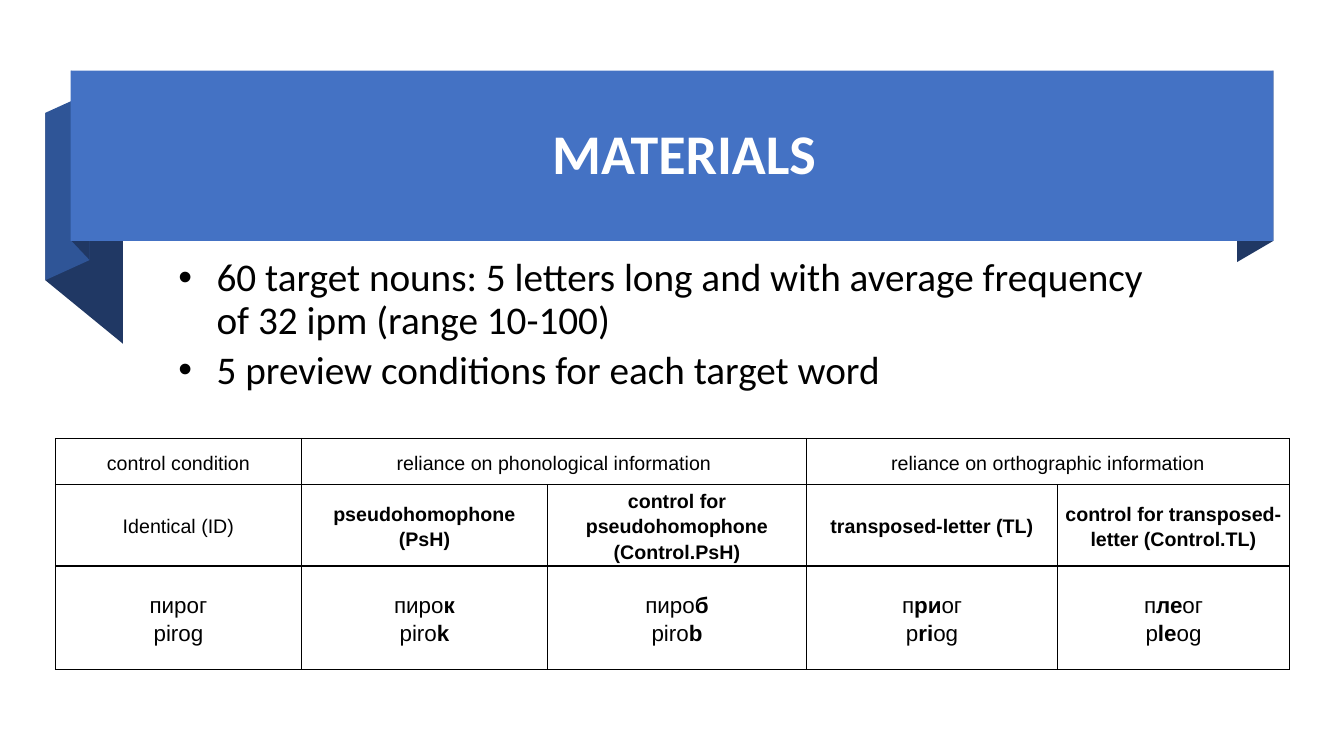
from dataclasses import dataclass

from lxml.etree import SubElement
from pptx import Presentation
from pptx.dml.color import RGBColor
from pptx.enum.shapes import MSO_SHAPE
from pptx.enum.text import MSO_ANCHOR, PP_ALIGN
from pptx.oxml.ns import qn
from pptx.util import Inches, Pt

# Content
TITLE = "MATERIALS"
BULLETS = [
    "60 target nouns: 5 letters long and with average frequency of 32 ipm (range 10-100)",
    "5 preview conditions for each target word",
]
# Each cell is a list of lines; asterisks enclose bold letters, None continues a merge
CONDITIONS = [
    [["control condition"], ["reliance on phonological information"], None,
     ["reliance on orthographic information"], None],
    [["Identical (ID)"], ["*pseudohomophone (PsH)*"],
     ["*control for pseudohomophone (Control.PsH)*"], ["*transposed-letter (TL)*"],
     ["*control for transposed-letter (Control.TL)*"]],
    [["пирог", "pirog"], ["пиро*к*", "piro*k*"], ["пиро*б*", "piro*b*"],
     ["п*ри*ог", "p*ri*og"], ["п*ле*ог", "p*le*og"]],
]
COLUMN_WIDTHS = [2.44, 2.44, 2.57, 2.49, 2.3]
ROW_HEIGHTS = [0.46, 0.8, 1.03]


@dataclass(frozen=True)
class Theme:
    banner: str = "4472C4"
    fold: str = "2F5597"
    shade: str = "203864"
    white: str = "FFFFFF"
    black: str = "000000"
    text_font: str = "Calibri"
    table_font: str = "Arial"
    title_size: int = 40
    bullet_size: int = 28
    row_sizes: tuple = (14, 14, 16)
    border: float = 1


THEME = Theme()

# Ribbon folds: left x, right x, top at left, top at right, height of the sides, colour
FOLDS = [
    (12.27, 12.63, 0.91, 0.7, 1.69, THEME.shade),
    (0.45, 1.22, 1.12, 1.75, 1.66, THEME.shade),
    (0.45, 0.89, 1.12, 0.92, 1.66, THEME.fold),
    (0.71, 0.89, 0.7, 0.89, 1.69, THEME.shade),
]


def paint(shape, color):
    shape.shadow.inherit = False
    shape.fill.solid()
    shape.fill.fore_color.rgb = RGBColor.from_string(color)
    shape.line.fill.background()


def add_run(paragraph, text, font, size, color, bold=False):
    run = paragraph.add_run()
    run.text = text
    run.font.name = font
    run.font.size = Pt(size)
    run.font.bold = bold
    run.font.color.rgb = RGBColor.from_string(color)


def paragraph_at(text_frame, index):
    return text_frame.add_paragraph() if index else text_frame.paragraphs[0]


def add_ribbon(slide):
    ribbon = slide.shapes.add_group_shape()
    for left, right, top_left, top_right, height, color in FOLDS:
        builder = ribbon.shapes.build_freeform(Inches(left), Inches(top_left))
        corners = [(right, top_right), (right, top_right + height), (left, top_left + height)]
        builder.add_line_segments([(Inches(x), Inches(y)) for x, y in corners], close=True)
        paint(builder.convert_to_shape(), color)
    banner = ribbon.shapes.add_shape(
        MSO_SHAPE.RECTANGLE, Inches(0.7), Inches(0.7), Inches(11.93), Inches(1.69))
    paint(banner, THEME.banner)


def set_title(slide):
    title = slide.shapes.title
    title.left, title.top = Inches(1.15), Inches(0.83)
    title.width, title.height = Inches(11.27), Inches(1.45)
    title.text_frame.vertical_anchor = MSO_ANCHOR.MIDDLE
    paragraph = title.text_frame.paragraphs[0]
    paragraph.alignment = PP_ALIGN.CENTER
    paragraph.line_spacing = 0.9
    add_run(paragraph, TITLE, THEME.text_font, THEME.title_size, THEME.white, True)
    # Bring the title in front of the ribbon
    slide.shapes._spTree.append(title._element)


def add_bullets(slide):
    box = slide.shapes.add_textbox(Inches(1.67), Inches(2.51), Inches(9.98), Inches(1.69))
    box.text_frame.word_wrap = True
    for index, text in enumerate(BULLETS):
        paragraph = paragraph_at(box.text_frame, index)
        paragraph.line_spacing = 0.9
        if index:
            paragraph.space_before = Pt(THEME.bullet_size * 0.2)
        properties = paragraph._p.get_or_add_pPr()
        properties.set("marL", str(Inches(0.38)))
        properties.set("indent", str(-Inches(0.38)))
        SubElement(properties, qn("a:buFont"), typeface=THEME.table_font)
        SubElement(properties, qn("a:buChar"), char="•")
        add_run(paragraph, text, THEME.text_font, THEME.bullet_size, THEME.black)


def style_cell(cell):
    properties = cell._tc.get_or_add_tcPr()
    for side in ("lnL", "lnR", "lnT", "lnB"):
        line = SubElement(properties, qn(f"a:{side}"), w=str(Pt(THEME.border)))
        fill = SubElement(line, qn("a:solidFill"))
        SubElement(fill, qn("a:srgbClr"), val=THEME.black)
    cell.fill.solid()
    cell.fill.fore_color.rgb = RGBColor.from_string(THEME.white)
    cell.margin_left = cell.margin_right = Inches(0.07)
    cell.margin_top = cell.margin_bottom = 0
    cell.vertical_anchor = MSO_ANCHOR.MIDDLE


def add_conditions(slide):
    frame = slide.shapes.add_table(
        len(ROW_HEIGHTS), len(COLUMN_WIDTHS), Inches(0.55), Inches(4.35),
        Inches(sum(COLUMN_WIDTHS)), Inches(sum(ROW_HEIGHTS)))
    table = frame.table
    table.first_row = table.horz_banding = False
    for column, width in zip(table.columns, COLUMN_WIDTHS):
        column.width = Inches(width)
    for row, height in zip(table.rows, ROW_HEIGHTS):
        row.height = Inches(height)
    for row_index, cells in enumerate(CONDITIONS):
        size = THEME.row_sizes[row_index]
        for column_index, lines in enumerate(cells):
            cell = table.cell(row_index, column_index)
            style_cell(cell)
            if lines is None:
                table.cell(row_index, column_index - 1).merge(cell)
                continue
            for line_index, line in enumerate(lines):
                paragraph = paragraph_at(cell.text_frame, line_index)
                paragraph.alignment = PP_ALIGN.CENTER
                paragraph.line_spacing = 1.15
                for part_index, part in enumerate(line.split("*")):
                    if part:
                        add_run(paragraph, part, THEME.table_font, size, THEME.black,
                                part_index % 2 == 1)


def main():
    presentation = Presentation()
    presentation.slide_width, presentation.slide_height = Inches(13.33), Inches(7.5)
    slide = presentation.slides.add_slide(presentation.slide_layouts[5])
    add_ribbon(slide)
    set_title(slide)
    add_bullets(slide)
    add_conditions(slide)
    presentation.save("out.pptx")


if __name__ == "__main__":
    main()
